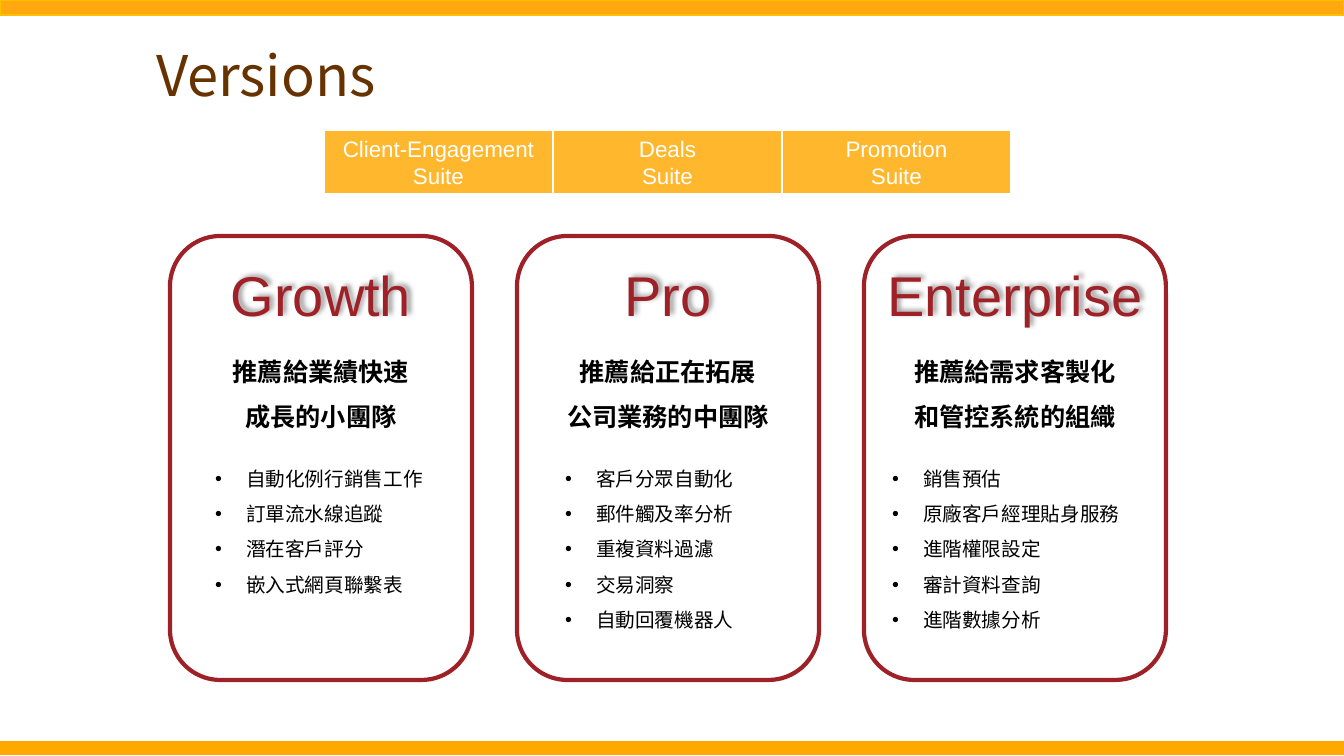
from dataclasses import dataclass

import pptx
import pptx.dml.color
import pptx.enum.shapes
import pptx.enum.text
import pptx.oxml
import pptx.oxml.ns
import pptx.util
from lxml import etree

MSO_SHAPE = pptx.enum.shapes.MSO_SHAPE
ALIGN = pptx.enum.text.PP_ALIGN
ANCHOR = pptx.enum.text.MSO_ANCHOR
SCALE = 914400 / 100.8  # EMU per px


@dataclass(frozen=True)
class Theme:
    latin: str = "Arial"
    cjk: str = "Noto Sans CJK SC"
    title: str = "663300"
    top_bar: str = "FFA80F"
    top_line: str = "FFC000"
    bottom_bar: str = "FFA800"
    module: str = "FFB72D"
    white: str = "FFFFFF"
    red: str = "9E2128"
    black: str = "000000"
    display_pt: int = 40
    lead_pt: int = 18
    module_pt: int = 16
    list_pt: int = 14


@dataclass(frozen=True)
class Box:
    x: int
    y: int
    w: int
    h: int


@dataclass(frozen=True)
class Version:
    name: str
    lead: str
    list_x: int
    list_w: int
    features: tuple[str, ...]


THEME = Theme()
MODULES = ("Client-Engagement\nSuite", "Deals\nSuite", "Promotion\nSuite")
VERSIONS = (
    Version("Growth", "推薦給業績快速 成長的小團隊", 205, 233,
            ("自動化例行銷售工作", "訂單流水線追蹤", "潛在客戶評分", "嵌入式網頁聯繫表")),
    Version("Pro", "推薦給正在拓展 公司業務的中團隊", 555, 224,
            ("客戶分眾自動化", "郵件觸及率分析", "重複資料過濾", "交易洞察", "自動回覆機器人")),
    Version("Enterprise", "推薦給需求客製化和管控系統的組織", 882, 257,
            ("銷售預估", "原廠客戶經理貼身服務", "進階權限設定", "審計資料查詢", "進階數據分析")),
)


def px(n: int) -> int:
    return round(n * SCALE)


def rgb(color: str) -> pptx.dml.color.RGBColor:
    return pptx.dml.color.RGBColor.from_string(color)


def place(sp, box: Box) -> None:
    sp.left, sp.top, sp.width, sp.height = map(px, (box.x, box.y, box.w, box.h))


def write(sp, text: str, size: int, font: str, color: str, align=ALIGN.LEFT,
          anchor=ANCHOR.TOP, bold: bool = False, spacing: float = 1.0) -> None:
    tf = sp.text_frame
    tf.text = text
    tf.word_wrap = True
    tf.auto_size = pptx.enum.text.MSO_AUTO_SIZE.NONE
    tf.vertical_anchor = anchor
    for p in tf.paragraphs:
        p.alignment = align
        p.line_spacing = spacing
        p.space_before = p.space_after = pptx.util.Pt(0)
        for r in p.runs:
            r.font.name, r.font.size, r.font.bold = font, pptx.util.Pt(size), bold
            r.font.color.rgb = rgb(color)
            ea = etree.SubElement(r.font._element, pptx.oxml.ns.qn("a:ea"))
            ea.set("typeface", font)


def add_shape(s, kind, box: Box, fill: str | None, line: str, width: float):
    sp = s.shapes.add_shape(kind, 0, 0, 0, 0)
    place(sp, box)
    sp.shadow.inherit = False
    if fill:
        sp.fill.solid()
        sp.fill.fore_color.rgb = rgb(fill)
    else:
        sp.fill.background()
    sp.line.color.rgb = rgb(line)
    sp.line.width = pptx.util.Pt(width)
    return sp


def add_text(s, box: Box):
    sp = s.shapes.add_textbox(0, 0, 0, 0)
    place(sp, box)
    return sp


def add_bullets(sp) -> None:
    for p in sp.text_frame.paragraphs:
        pPr = p._p.get_or_add_pPr()
        pPr.set("marL", str(px(31)))
        pPr.set("indent", str(-px(31)))
        etree.SubElement(pPr, pptx.oxml.ns.qn("a:buFont")).set("typeface", THEME.latin)
        etree.SubElement(pPr, pptx.oxml.ns.qn("a:buChar")).set("char", "•")


def add_shadow(sp) -> None:
    sp._element.spPr.append(pptx.oxml.parse_xml(
        f'<a:effectLst {pptx.oxml.ns.nsdecls("a")}>'
        '<a:outerShdw blurRad="50800" dist="38100" dir="18900000" algn="bl" rotWithShape="0">'
        '<a:prstClr val="black"><a:alpha val="40000"/></a:prstClr>'
        '</a:outerShdw></a:effectLst>'))


def add_version(s, version: Version, card: Box, body) -> None:
    add_shape(s, MSO_SHAPE.ROUNDED_RECTANGLE, card, None, THEME.red, 3)
    heading = add_text(s, Box(card.x + 6, 256, card.w - 12, 122))
    write(heading, version.name, THEME.display_pt, THEME.latin, THEME.red, ALIGN.CENTER)
    add_shadow(heading)
    lead = add_text(s, Box(card.x + (card.w - 224) // 2, 336, 224, 102))
    write(lead, version.lead, THEME.lead_pt, THEME.cjk, THEME.black,
          ALIGN.CENTER, bold=True, spacing=1.5)
    place(body, Box(version.list_x, 450, version.list_w, 183))
    write(body, "\n".join(version.features), THEME.list_pt, THEME.cjk,
          THEME.black, spacing=1.5)
    add_bullets(body)


def main() -> None:
    prs = pptx.Presentation()
    prs.slide_width, prs.slide_height = px(1344), px(756)
    s = prs.slides.add_slide(prs.slide_layouts[4])
    title, *bodies, spare = s.placeholders
    spare._element.getparent().remove(spare._element)

    # Edge bars
    add_shape(s, MSO_SHAPE.RECTANGLE, Box(0, 0, 1344, 15), THEME.top_bar, THEME.top_line, 1)
    add_shape(s, MSO_SHAPE.RECTANGLE, Box(0, 742, 1344, 12), THEME.bottom_bar,
              THEME.bottom_bar, 1)

    # Title
    place(title, Box(146, 5, 1226, 146))
    write(title, "Versions", THEME.display_pt, THEME.cjk, THEME.title,
          anchor=ANCHOR.MIDDLE, spacing=0.9)

    # Modules shared by all versions
    for i, module in enumerate(MODULES):
        sp = add_shape(s, MSO_SHAPE.RECTANGLE, Box(324 + 229 * i, 130, 229, 64),
                       THEME.module, THEME.white, 1.5)
        write(sp, module, THEME.module_pt, THEME.latin, THEME.white,
              ALIGN.CENTER, ANCHOR.MIDDLE)

    # Version cards
    for i, (version, body) in enumerate(zip(VERSIONS, bodies)):
        add_version(s, version, Box(170 + 347 * i, 236, 302, 444), body)

    prs.save("out.pptx")


if __name__ == "__main__":
    main()
